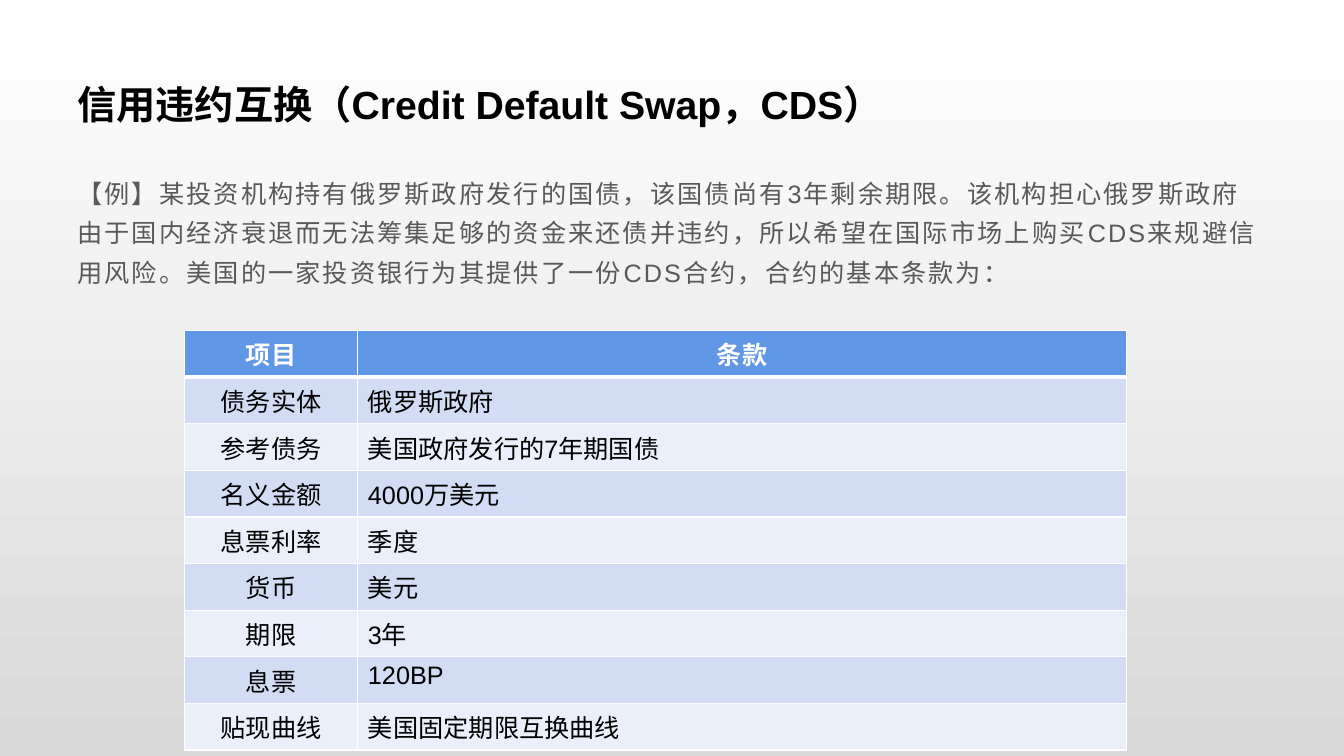
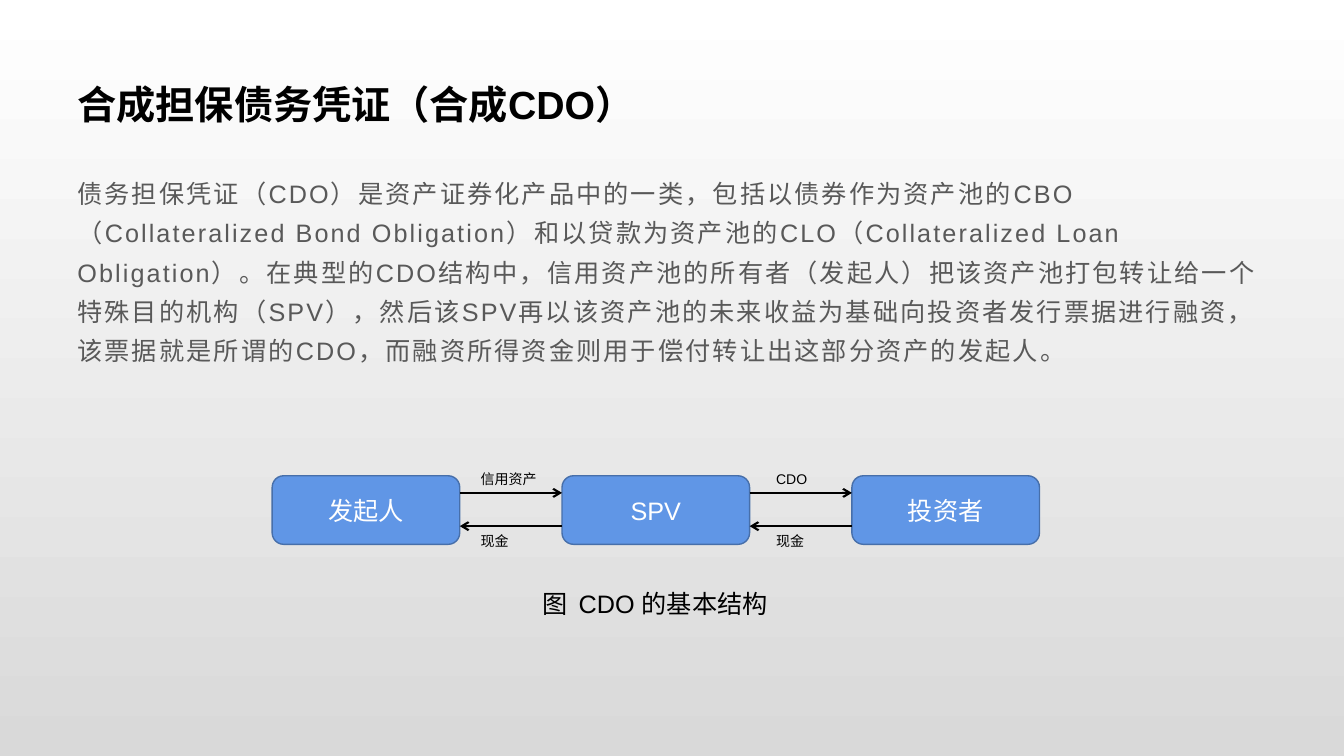
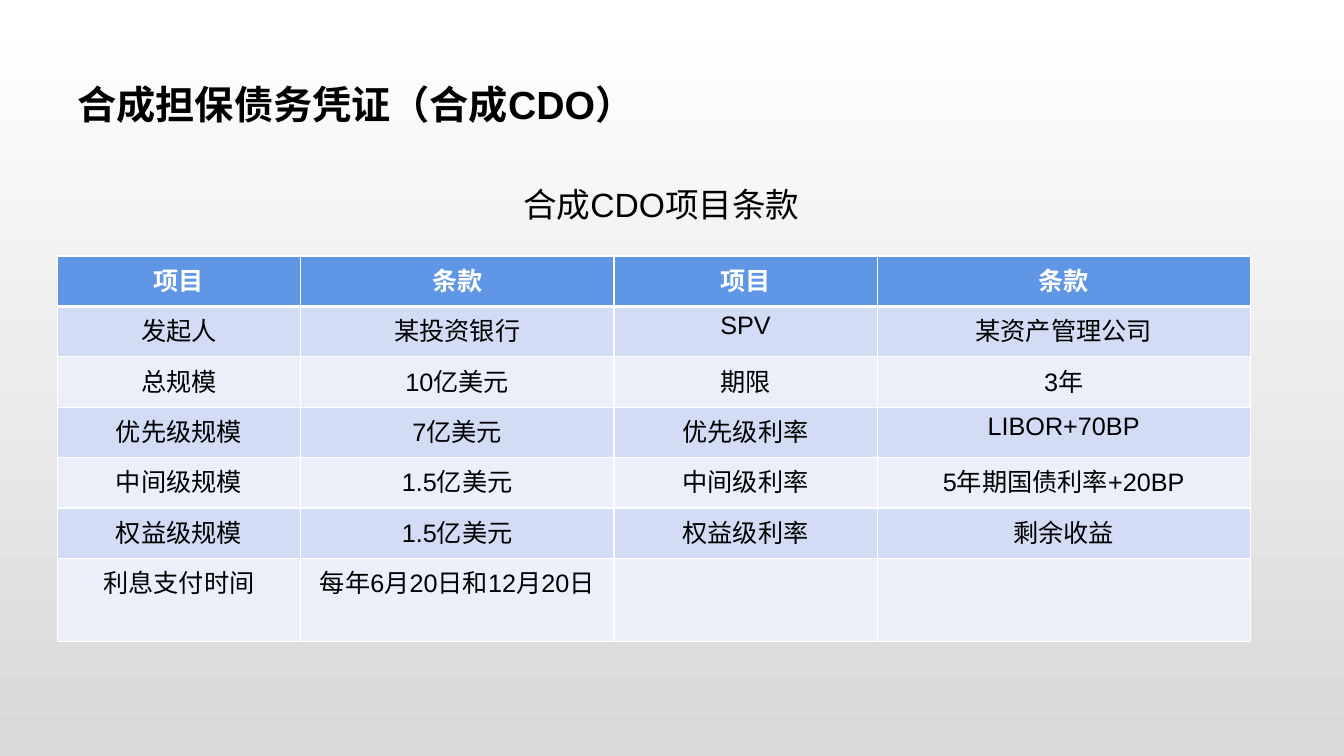
from lxml.etree import SubElement
from pptx import Presentation
from pptx.dml.color import RGBColor
from pptx.enum.lang import MSO_LANGUAGE_ID
from pptx.enum.shapes import MSO_CONNECTOR, MSO_SHAPE
from pptx.enum.text import MSO_ANCHOR, MSO_AUTO_SIZE, PP_ALIGN
from pptx.oxml.ns import qn
from pptx.util import Inches, Pt

BLACK = RGBColor(0x00, 0x00, 0x00)
WHITE = RGBColor(0xFF, 0xFF, 0xFF)
GREY = RGBColor(0x59, 0x59, 0x59)
BACKGROUND_END = RGBColor(0xD9, 0xD9, 0xD9)
BLUE = RGBColor(0x60, 0x96, 0xE6)
BLUE_EDGE = RGBColor(0x47, 0x6F, 0xAA)
BANDS = (RGBColor(0xEA, 0xEF, 0xFA), RGBColor(0xD2, 0xDD, 0xF5))

FONT_BASE = {"name": "Arial", "bold": False, "language_id": MSO_LANGUAGE_ID.SIMPLIFIED_CHINESE}
TITLE = {"size": Pt(28), "bold": True}
BODY = {"size": Pt(18), "color": GREY}
NORMAL = {"size": Pt(18)}
HEADER = {"size": Pt(18), "bold": True, "color": WHITE}
BOX = {"size": Pt(18), "color": WHITE}
LABEL = {"size": Pt(10)}
SUBTITLE = {"size": Pt(24)}
BODY_PARAGRAPH = {"line_spacing": 1.3, "space_after": Pt(10)}
CENTRED = {"alignment": PP_ALIGN.CENTER}
LEFT = {"alignment": PP_ALIGN.LEFT}

SWAP_TITLE = "信用违约互换（Credit Default Swap，CDS）"
CDO_TITLE = "合成担保债务凭证（合成CDO）"
SWAP_BODY = (
    "【例】某投资机构持有俄罗斯政府发行的国债，该国债尚有3年剩余期限。"
    "该机构担心俄罗斯政府由于国内经济衰退而无法筹集足够的资金来还债并违约，"
    "所以希望在国际市场上购买CDS来规避信用风险。"
    "美国的一家投资银行为其提供了一份CDS合约，合约的基本条款为："
)
CDO_BODY = (
    "债务担保凭证（CDO）是资产证券化产品中的一类，"
    "包括以债券作为资产池的CBO（Collateralized Bond Obligation）"
    "和以贷款为资产池的CLO（Collateralized Loan Obligation）。"
    "在典型的CDO结构中，信用资产池的所有者（发起人）把该资产池打包转让给一个特殊目的机构（SPV），"
    "然后该SPV再以该资产池的未来收益为基础向投资者发行票据进行融资，"
    "该票据就是所谓的CDO，而融资所得资金则用于偿付转让出这部分资产的发起人。"
)
SWAP_TERMS = [
    ("项目", "条款"),
    ("债务实体", "俄罗斯政府"),
    ("参考债务", "美国政府发行的7年期国债"),
    ("名义金额", "4000万美元"),
    ("息票利率", "季度"),
    ("货币", "美元"),
    ("期限", "3年"),
    ("息票", "120BP"),
    ("贴现曲线", "美国固定期限互换曲线"),
]
CDO_TERMS = [
    ("项目", "条款", "项目", "条款"),
    ("发起人", "某投资银行", "SPV", "某资产管理公司"),
    ("总规模", "10亿美元", "期限", "3年"),
    ("优先级规模", "7亿美元", "优先级利率", "LIBOR+70BP"),
    ("中间级规模", "1.5亿美元", "中间级利率", "5年期国债利率+20BP"),
    ("权益级规模", "1.5亿美元", "权益级利率", "剩余收益"),
    ("利息支付时间", "每年6月20日和12月20日", "", ""),
]
PARTIES = ["发起人", "SPV", "投资者"]
FLOWS = [("信用资产", "现金"), ("CDO", "现金")]
DIAGRAM_CAPTION = "图  CDO 的基本结构"
CDO_SUBTITLE = "合成CDO项目条款"


def write(text_frame, text, font_format, paragraph_format=LEFT, letter_spacing=None):
    paragraph = text_frame.paragraphs[0]
    for name, value in paragraph_format.items():
        setattr(paragraph, name, value)
    run = paragraph.add_run()
    run.text = text
    values = {**FONT_BASE, "color": BLACK, **font_format}
    run.font.color.rgb = values.pop("color")
    for name, value in values.items():
        setattr(run.font, name, value)
    if letter_spacing:
        run.font._element.set("spc", str(letter_spacing))


def add_text(slide, box, text, font_format, paragraph_format=LEFT, letter_spacing=None,
             anchor=MSO_ANCHOR.TOP, auto_size=MSO_AUTO_SIZE.SHAPE_TO_FIT_TEXT):
    text_frame = slide.shapes.add_textbox(*map(Inches, box)).text_frame
    frame_format = {"word_wrap": True, "vertical_anchor": anchor, "auto_size": auto_size}
    for name, value in frame_format.items():
        setattr(text_frame, name, value)
    write(text_frame, text, font_format, paragraph_format, letter_spacing)


def add_titled_slide(presentation, title, body=None):
    slide = presentation.slides.add_slide(presentation.slide_layouts[6])
    add_text(slide, (0.67, 0.65, 12, 0.77), title, TITLE,
             anchor=MSO_ANCHOR.MIDDLE, auto_size=MSO_AUTO_SIZE.NONE)
    if body:
        add_text(slide, (0.67, 1.63, 12, 5.2), body, BODY, BODY_PARAGRAPH,
                 letter_spacing=150, auto_size=MSO_AUTO_SIZE.NONE)
    return slide


def add_borders(cell, row_index):
    properties = cell._tc.get_or_add_tcPr()
    widths = {"lnL": 1, "lnR": 1, "lnT": 3 if row_index == 1 else 1, "lnB": 3 if row_index == 0 else 1}
    for tag, width in widths.items():
        line = SubElement(properties, qn(f"a:{tag}"), w=str(Pt(width)))
        fill = SubElement(line, qn("a:solidFill"))
        SubElement(fill, qn("a:srgbClr"), val=str(WHITE))


def add_terms(slide, rows, left, top, column_widths, row_height, centred_columns):
    shape = slide.shapes.add_table(
        len(rows), len(column_widths), Inches(left), Inches(top),
        Inches(sum(column_widths)), Inches(row_height * len(rows)))
    table = shape.table
    for column, width in zip(table.columns, column_widths):
        column.width = Inches(width)
    for row_index, row in enumerate(rows):
        table.rows[row_index].height = Inches(row_height)
        for column_index, text in enumerate(row):
            cell = table.cell(row_index, column_index)
            add_borders(cell, row_index)
            cell.fill.solid()
            cell.fill.fore_color.rgb = BANDS[row_index % 2] if row_index else BLUE
            centred = row_index == 0 or column_index in centred_columns
            if text:
                write(cell.text_frame, text, NORMAL if row_index else HEADER,
                      CENTRED if centred else LEFT)


def add_arrow(slide, start, end, y):
    connector = slide.shapes.add_connector(
        MSO_CONNECTOR.STRAIGHT, Inches(start), Inches(y), Inches(end), Inches(y))
    connector.line.color.rgb = BLACK
    connector.line.width = Pt(1.5)
    SubElement(connector.line._get_or_add_ln(), qn("a:tailEnd"), type="arrow")
    SubElement(connector._element.spPr, qn("a:effectLst"))


def add_structure(slide):
    left, top, width, height = 2.7, 4.72, 1.86, 0.68
    pitch = (8.45 - left) / (len(PARTIES) - 1)
    for index, party in enumerate(PARTIES):
        box = (left + index * pitch, top, width, height)
        shape = slide.shapes.add_shape(MSO_SHAPE.ROUNDED_RECTANGLE, *map(Inches, box))
        shape.shadow.inherit = False
        shape.fill.solid()
        shape.fill.fore_color.rgb = BLUE
        shape.line.color.rgb = BLUE_EDGE
        shape.line.width = Pt(1)
        shape.text_frame.vertical_anchor = MSO_ANCHOR.MIDDLE
        write(shape.text_frame, party, BOX, CENTRED)
    for index, (forward, backward) in enumerate(FLOWS):
        start = left + width + index * pitch
        end = left + (index + 1) * pitch
        add_arrow(slide, start, end, 4.89)
        add_arrow(slide, end, start, 5.22)
        label_left = 4.67 + index * 2.93
        for label, label_top in ((forward, 4.62), (backward, 5.23)):
            add_text(slide, (label_left, label_top, 1.33, 0.27), label, LABEL)
    add_text(slide, (5.28, 5.79, 3.44, 0.4), DIAGRAM_CAPTION, NORMAL)


def main():
    presentation = Presentation()
    presentation.slide_width = Inches(13.33)
    presentation.slide_height = Inches(7.5)
    background = presentation.slide_master.background.fill
    background.gradient()
    background.gradient_angle = 270
    for stop, color in zip(background.gradient_stops, (WHITE, BACKGROUND_END)):
        stop.color.rgb = color

    swap_slide = add_titled_slide(presentation, SWAP_TITLE, SWAP_BODY)
    add_terms(swap_slide, SWAP_TERMS, 1.83, 3.28, (1.72, 7.62), 0.42, {0})

    structure_slide = add_titled_slide(presentation, CDO_TITLE, CDO_BODY)
    add_structure(structure_slide)

    terms_slide = add_titled_slide(presentation, CDO_TITLE)
    add_terms(terms_slide, CDO_TERMS, 0.57, 2.54, (2.41, 3.11, 2.61, 3.7), 0.5, {0, 1, 2, 3})
    add_text(terms_slide, (5.09, 1.78, 3.15, 0.5), CDO_SUBTITLE, SUBTITLE)

    presentation.save("out.pptx")


if __name__ == "__main__":
    main()
